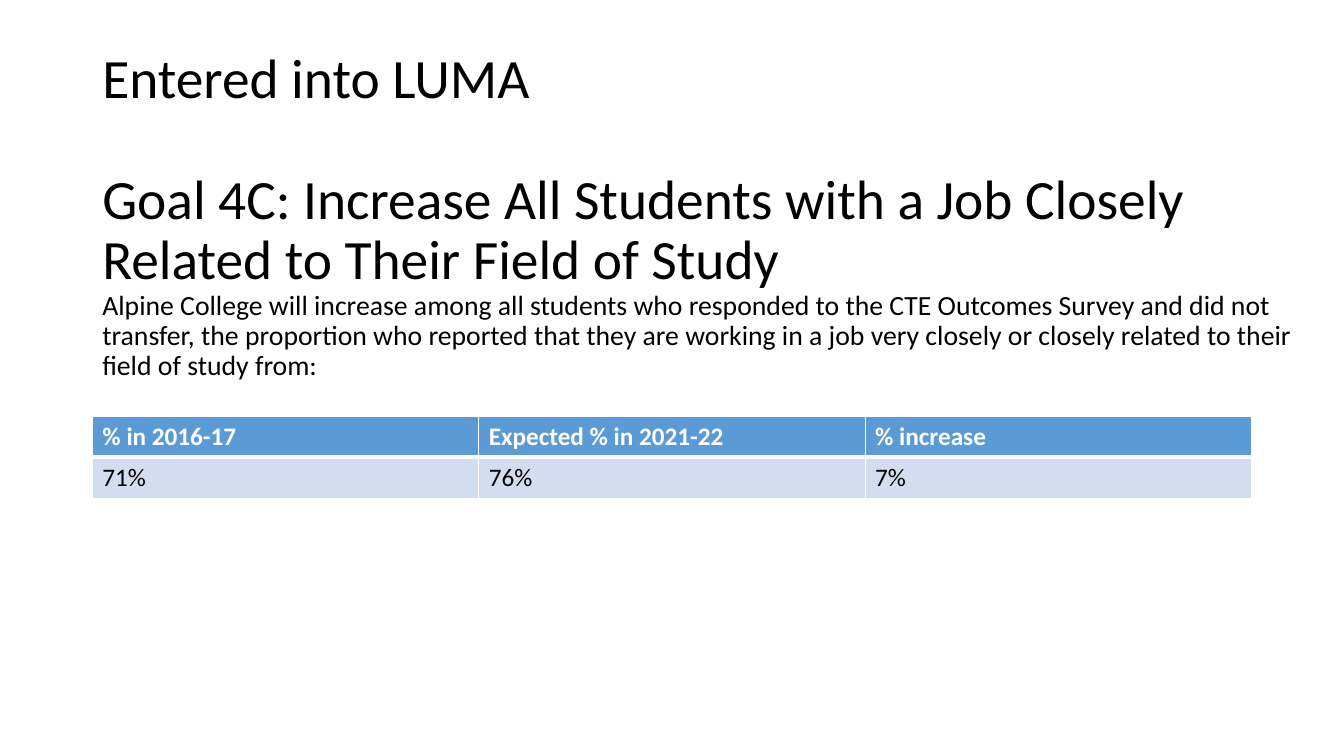
from lxml import etree
from pptx import Presentation
from pptx.dml.color import RGBColor
from pptx.enum import text
from pptx.oxml import ns
from pptx.util import Pt

FONT = "Calibri"
BLACK, WHITE, BLUE, PALE_BLUE = "000000", "FFFFFF", "5B9BD5", "D2DEEF"

# wording, size, space before
HEADING = [
    ("Entered into LUMA", 39.6, 0),
    ("Goal 4C: Increase All Students with a Job Closely Related to Their Field of Study", 39.6, 43.5),
    ("Alpine College will increase among all students who responded to the CTE Outcomes Survey "
     "and did not transfer, the proportion who reported that they are working in a job very "
     "closely or closely related to their field of study from:", 19.8, 0),
]
GOAL_ROWS = [
    ("% in 2016-17", "Expected % in 2021-22", "% increase"),
    ("71%", "76%", "7%"),
]

LEFT = 66
HEADING_TOP, HEADING_WIDTH, HEADING_HEIGHT = 113, 871, 104.4
HEADING_BOTTOM_INSET = 25.3
TABLE_TOP, TABLE_WIDTH, ROW_HEIGHT = 297.4, 828, 29.2


def color(hex_value):
    return RGBColor.from_string(hex_value)


def set_font(para, size, hex_value, bold=False):
    font = para.font
    font.name, font.size, font.bold = FONT, Pt(size), bold
    font.color.rgb = color(hex_value)


def add_borders(cell, bottom_width, top_width):
    """Give a cell solid white edges."""
    properties = cell._tc.get_or_add_tcPr()
    for side, width in (("L", 1), ("R", 1), ("T", top_width), ("B", bottom_width)):
        line = etree.SubElement(properties, ns.qn(f"a:ln{side}"), w=str(Pt(width)))
        fill = etree.SubElement(line, ns.qn("a:solidFill"))
        etree.SubElement(fill, ns.qn("a:srgbClr"), val=WHITE)


def add_heading(page):
    box = page.shapes.add_textbox(Pt(LEFT), Pt(HEADING_TOP), Pt(HEADING_WIDTH), Pt(HEADING_HEIGHT))
    frame = box.text_frame
    frame.word_wrap = True
    frame.vertical_anchor = text.MSO_ANCHOR.MIDDLE
    frame.margin_bottom = Pt(HEADING_BOTTOM_INSET)
    for index, (wording, size, gap) in enumerate(HEADING):
        para = frame.add_paragraph() if index else frame.paragraphs[0]
        para.text = wording
        para.line_spacing = 0.9
        para.space_before = Pt(gap)
        set_font(para, size, BLACK)


def add_goal_table(page):
    row_count, column_count = len(GOAL_ROWS), len(GOAL_ROWS[0])
    table = page.shapes.add_table(row_count, column_count, Pt(LEFT), Pt(TABLE_TOP),
                                  Pt(TABLE_WIDTH), Pt(ROW_HEIGHT * row_count)).table
    for row_index, row in enumerate(GOAL_ROWS):
        is_header = row_index == 0
        for column_index, wording in enumerate(row):
            cell = table.cell(row_index, column_index)
            cell.text = wording
            set_font(cell.text_frame.paragraphs[0], 18, WHITE if is_header else BLACK, is_header)
            add_borders(cell, bottom_width=3 if is_header else 1, top_width=1 if is_header else 3)
            cell.fill.solid()
            cell.fill.fore_color.rgb = color(BLUE if is_header else PALE_BLUE)


def main():
    deck = Presentation()
    deck.slide_width, deck.slide_height = Pt(960), Pt(540)
    page = deck.slides.add_slide(deck.slide_layouts[6])
    add_heading(page)
    add_goal_table(page)
    deck.save("out.pptx")


if __name__ == "__main__":
    main()
